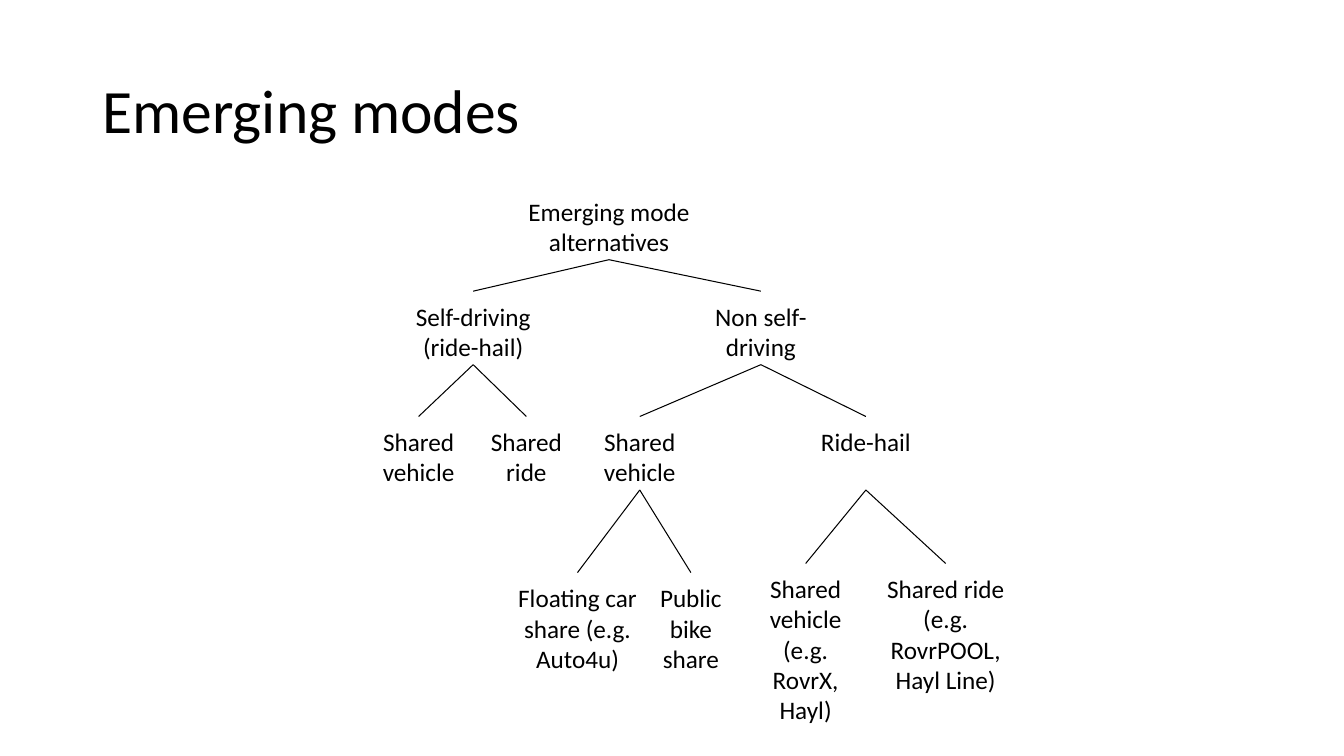
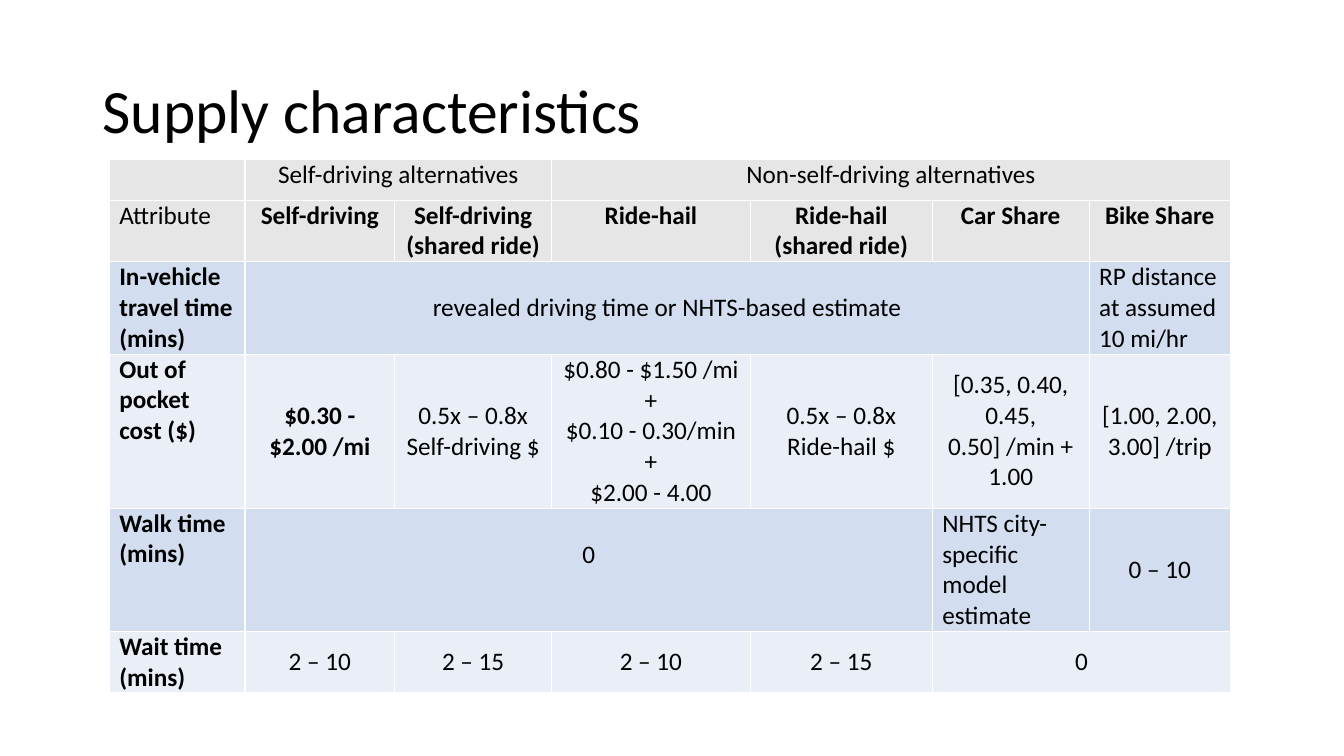
from lxml.etree import SubElement
from pptx import Presentation
from pptx.dml.color import RGBColor
from pptx.enum.shapes import MSO_CONNECTOR
from pptx.enum.text import MSO_ANCHOR, PP_ALIGN
from pptx.oxml.ns import qn
from pptx.util import Pt

BLACK = "000000"
WHITE = "FFFFFF"
HEADER_FILL = "E7E6E6"
BAND_FILLS = ["D2DEEF", "EAEFF7"]

LEVEL_TOP = [133, 208, 297.5]
NODE_HEIGHT = 52.5
SHARED_LEAVES = (409, 82)
HAIL_LEAVES = (402.5, 124)

# name: (parent, text, centre, width, top, height)
NODES = {
    "root": (None, "Emerging mode alternatives", 435, 136, LEVEL_TOP[0], NODE_HEIGHT),
    "self": ("root", "Self-driving (ride-hail)", 338, 109, LEVEL_TOP[1], NODE_HEIGHT),
    "non self": ("root", "Non self-driving", 543.5, 101, LEVEL_TOP[1], NODE_HEIGHT),
    "self vehicle": ("self", "Shared vehicle", 299, 109, LEVEL_TOP[2], NODE_HEIGHT),
    "self ride": ("self", "Shared\nride", 376, 86, LEVEL_TOP[2], NODE_HEIGHT),
    "vehicle": ("non self", "Shared vehicle", 457, 86, LEVEL_TOP[2], NODE_HEIGHT),
    "hail": ("non self", "Ride-hail", 618.5, 86, LEVEL_TOP[2], NODE_HEIGHT),
    "car": ("vehicle", "Floating car share (e.g. Auto4u)", 412.5, 101, *SHARED_LEAVES),
    "bike": ("vehicle", "Public bike share", 493.5, 86, *SHARED_LEAVES),
    "hail vehicle": ("hail", "Shared vehicle\n(e.g. RovrX, Hayl)", 575.5, 91.5, *HAIL_LEAVES),
    "hail ride": ("hail", "Shared ride\n(e.g. RovrPOOL, Hayl Line)", 675.5, 114, *HAIL_LEAVES),
}

COLUMN_WIDTHS = [97, 107, 112, 142, 130, 112, 101]
ROW_HEIGHTS = [29, 44, 66, 110, 88, 44]
ROWS = [
    ["", "Self-driving alternatives", None, "Non-self-driving alternatives", None, None, None],
    ["Attribute", "Self-driving", "Self-driving (shared ride)", "Ride-hail",
     "Ride-hail (shared ride)", "Car Share", "Bike Share"],
    ["In-vehicle travel time (mins)", "revealed driving time or NHTS-based estimate",
     None, None, None, None, "RP distance at assumed 10 mi/hr"],
    ["Out of pocket cost ($)", "$0.30 - $2.00 /mi", "0.5x – 0.8x Self-driving $",
     "$0.80 - $1.50 /mi +\n$0.10 - 0.30/min\n+\n$2.00 - 4.00", "0.5x – 0.8x Ride-hail $",
     "[0.35, 0.40, 0.45, 0.50] /min + 1.00", "[1.00, 2.00, 3.00] /trip"],
    ["Walk time (mins)", "0", None, None, None, "NHTS city-specific model estimate", "0 – 10"],
    ["Wait time (mins)", "2 – 10", "2 – 15", "2 – 10", "2 – 15", "0", None],
]
LEFT_CELLS = {(2, 6), (4, 5)}
BOLD_CELLS = {(3, 1)}
RAISED_CELL = (4, 1)


def colour(value):
    return RGBColor.from_string(value)


class Deck:
    font = "Calibri"
    title_size = 44
    body_size = 18
    inset = 7.2

    def __init__(self):
        self.presentation = Presentation()
        self.presentation.slide_width = Pt(960)
        self.presentation.slide_height = Pt(540)
        self.slide = None

    def add_text(self, frame, text, size, align, bold=False):
        for index, line in enumerate(text.split("\n")):
            paragraph = frame.add_paragraph() if index else frame.paragraphs[0]
            paragraph.alignment = align
            run = paragraph.add_run()
            run.text = line
            run.font.name = self.font
            run.font.size = Pt(size)
            run.font.bold = bold
            run.font.color.rgb = colour(BLACK)

    def add_slide(self, title):
        self.slide = self.presentation.slides.add_slide(self.presentation.slide_layouts[5])
        shape = self.slide.shapes.title
        shape.left, shape.top, shape.width, shape.height = Pt(66), Pt(29), Pt(828), Pt(104)
        frame = shape.text_frame
        frame.vertical_anchor = MSO_ANCHOR.MIDDLE
        self.add_text(frame, title, self.title_size, PP_ALIGN.LEFT)
        frame.paragraphs[0].line_spacing = 0.9

    def add_node(self, text, centre, width, top, height):
        shape = self.slide.shapes.add_textbox(
            Pt(centre - width / 2), Pt(top), Pt(width), Pt(height))
        frame = shape.text_frame
        frame.word_wrap = True
        frame.margin_left = frame.margin_right = Pt(self.inset)
        frame.margin_top = frame.margin_bottom = Pt(self.inset)
        self.add_text(frame, text, self.body_size, PP_ALIGN.CENTER)
        return shape

    def add_branch(self, parent, child):
        connector = self.slide.shapes.add_connector(MSO_CONNECTOR.STRAIGHT, 0, 0, 0, 0)
        connector.begin_connect(parent, 2)
        connector.end_connect(child, 0)
        connector.line.color.rgb = colour(BLACK)
        connector.line.width = Pt(0.75)
        SubElement(connector.element.spPr, qn("a:effectLst"))

    def add_table(self, left, top, widths, heights):
        table = self.slide.shapes.add_table(
            len(heights), len(widths), Pt(left), Pt(top),
            Pt(sum(widths)), Pt(sum(heights))).table
        table.first_row = table.horz_banding = False
        for column, width in zip(table.columns, widths):
            column.width = Pt(width)
        for row, height in zip(table.rows, heights):
            row.height = Pt(height)
        return table

    def style_cell(self, cell, fill):
        properties = cell._tc.get_or_add_tcPr()
        for side in ("lnL", "lnR", "lnT", "lnB"):
            line = SubElement(properties, qn(f"a:{side}"), w=str(Pt(1)))
            solid = SubElement(line, qn("a:solidFill"))
            SubElement(solid, qn("a:srgbClr"), val=WHITE)
        cell.fill.solid()
        cell.fill.fore_color.rgb = colour(fill)
        cell.margin_left = cell.margin_right = Pt(self.inset)
        cell.margin_top = cell.margin_bottom = 0


def build_modes(deck):
    deck.add_slide("Emerging modes")
    shapes = {}
    for name, (parent, *node) in NODES.items():
        shapes[name] = deck.add_node(*node)
        if parent:
            deck.add_branch(shapes[parent], shapes[name])


def build_supply(deck):
    deck.add_slide("Supply characteristics")
    table = deck.add_table(78, 114, COLUMN_WIDTHS, ROW_HEIGHTS)
    for row, texts in enumerate(ROWS):
        header = row < 2
        for column, text in enumerate(texts):
            cell = table.cell(row, column)
            deck.style_cell(cell, HEADER_FILL if header else BAND_FILLS[row % 2])
            if text is None:
                continue
            last = column
            while last + 1 < len(texts) and texts[last + 1] is None:
                last += 1
            if last > column:
                cell.merge(table.cell(row, last))
            label = column == 0
            bold = (row == 1 and not label) or (label and not header) or (row, column) in BOLD_CELLS
            left = label or (row, column) in LEFT_CELLS
            cell.vertical_anchor = MSO_ANCHOR.TOP if header or label else MSO_ANCHOR.MIDDLE
            if (row, column) == RAISED_CELL:
                cell.margin_bottom = Pt(22)
            if text:
                deck.add_text(cell.text_frame, text, deck.body_size,
                              PP_ALIGN.LEFT if left else PP_ALIGN.CENTER, bold)


def main():
    deck = Deck()
    build_modes(deck)
    build_supply(deck)
    deck.presentation.save("out.pptx")


if __name__ == "__main__":
    main()
